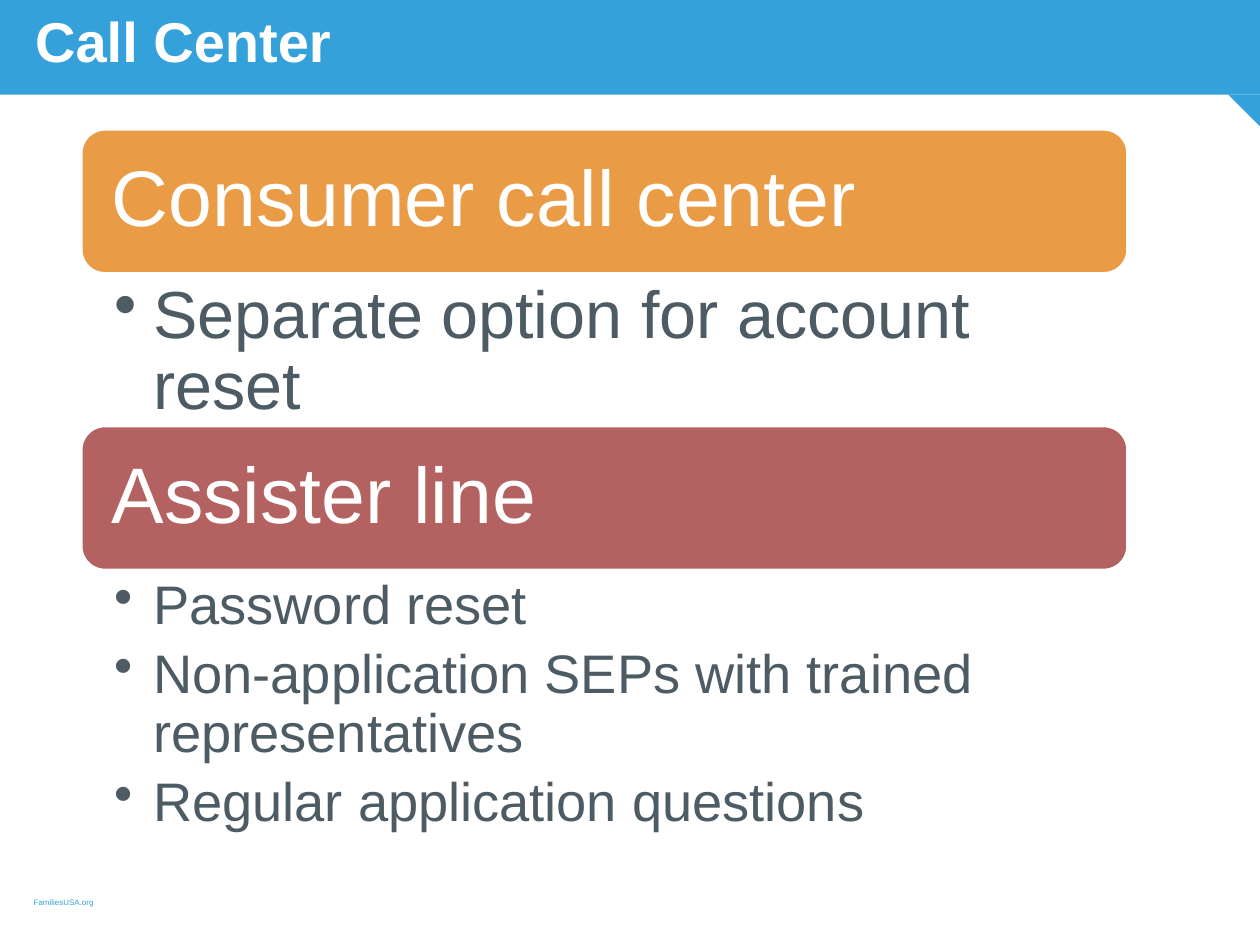
import pptx
import pptx.dml.color
import pptx.enum.shapes
import pptx.enum.text
import pptx.oxml
import pptx.oxml.ns
import pptx.util
from dataclasses import dataclass

Cm = pptx.util.Cm
Pt = pptx.util.Pt
Shapes = pptx.enum.shapes.MSO_SHAPE
Anchor = pptx.enum.text.MSO_ANCHOR


@dataclass(frozen=True)
class Theme:
    font: str = "Arial"
    blue: str = "35A1DA"
    orange: str = "EA9B45"
    red: str = "B46162"
    slate: str = "4C5B64"
    white: str = "FFFFFF"
    title_size: float = 32
    heading_size: float = 45
    footer_size: float = 4.5


THEME = Theme()
SLIDE_WIDTH, SLIDE_HEIGHT = 25.4, 19.05
BAND_HEIGHT, CORNER = 1.91, 0.64
LEFT, TOP, WIDTH, HEADING_HEIGHT = 1.63, 2.6, 21.11, 2.92

# heading, colour, body height, bullet size, bullets
SECTIONS = [
    ("Consumer call center", THEME.orange, 3.06, 38,
     ["Separate option for account reset"]),
    ("Assister line", THEME.red, 5.41, 31,
     ["Password reset",
      "Non-application SEPs with trained representatives",
      "Regular application questions"]),
]


def rgb(value):
    return pptx.dml.color.RGBColor.from_string(value)


def add_block(slide, kind, left, top, width, height, color):
    block = slide.shapes.add_shape(kind, Cm(left), Cm(top), Cm(width), Cm(height))
    block.shadow.inherit = False
    block.fill.solid()
    block.fill.fore_color.rgb = rgb(color)
    block.line.fill.background()
    return block


def add_label(slide, left, top, width, height):
    label = slide.shapes.add_textbox(Cm(left), Cm(top), Cm(width), Cm(height))
    label.text_frame.word_wrap = True
    return label.text_frame


def set_insets(frame, left, top, right, bottom):
    frame.margin_left, frame.margin_top = Cm(left), Cm(top)
    frame.margin_right, frame.margin_bottom = Cm(right), Cm(bottom)


def write(paragraph, words, size, color, bold=False):
    paragraph.alignment = pptx.enum.text.PP_ALIGN.LEFT
    run = paragraph.add_run()
    run.text = words
    run.font.name = THEME.font
    run.font.size = Pt(size)
    run.font.bold = bold
    run.font.color.rgb = rgb(color)


def add_bullet(paragraph):
    properties = paragraph._p.get_or_add_pPr()
    properties.set("marL", str(Cm(0.79)))
    properties.set("indent", str(-Cm(0.79)))
    properties.append(pptx.oxml.parse_xml(
        f'<a:buChar {pptx.oxml.ns.nsdecls("a")} char="•"/>'))


def add_heading(slide, top, words, color):
    heading = add_block(slide, Shapes.ROUNDED_RECTANGLE,
                        LEFT, top, WIDTH, HEADING_HEIGHT, color)
    heading.line.color.rgb = rgb(THEME.white)
    heading.line.width = Pt(2)
    frame = heading.text_frame
    frame.word_wrap = True
    frame.vertical_anchor = Anchor.MIDDLE
    set_insets(frame, 0.48, 0.48, 0.48, 0.48)
    frame.paragraphs[0].line_spacing = 0.9
    write(frame.paragraphs[0], words, THEME.heading_size, THEME.white)


def add_bullets(slide, top, height, size, bullets):
    frame = add_label(slide, LEFT, top, WIDTH, height)
    set_insets(frame, 0.67, 0.14, 0.77, 0.14)
    for index, words in enumerate(bullets):
        paragraph = frame.add_paragraph() if index else frame.paragraphs[0]
        paragraph.level = 1
        add_bullet(paragraph)
        paragraph.line_spacing = 0.9
        paragraph.space_after = Pt(round(size * 0.2))
        write(paragraph, words, size, THEME.slate)


def main():
    deck = pptx.Presentation()
    deck.slide_width, deck.slide_height = Cm(SLIDE_WIDTH), Cm(SLIDE_HEIGHT)
    slide = deck.slides.add_slide(deck.slide_layouts[6])

    # Title band with its folded corner
    add_block(slide, Shapes.RECTANGLE, 0, 0, SLIDE_WIDTH, BAND_HEIGHT, THEME.blue)
    fold = add_block(slide, Shapes.RIGHT_TRIANGLE, SLIDE_WIDTH - CORNER,
                     BAND_HEIGHT, CORNER, CORNER, THEME.blue)
    fold.rotation = 180
    title = add_label(slide, 0.46, 0, 17.22, 1.63)
    write(title.paragraphs[0], "Call Center", THEME.title_size, THEME.white, bold=True)

    # Sections stacked from the top
    top = TOP
    for heading, color, body_height, size, bullets in SECTIONS:
        add_heading(slide, top, heading, color)
        top += HEADING_HEIGHT
        add_bullets(slide, top, body_height, size, bullets)
        top += body_height

    # Footer
    footer = add_label(slide, 0.43, 17.98, 8.69, 0.46)
    write(footer.paragraphs[0], "FamiliesUSA.org", THEME.footer_size, THEME.blue)

    deck.save("out.pptx")


if __name__ == "__main__":
    main()
